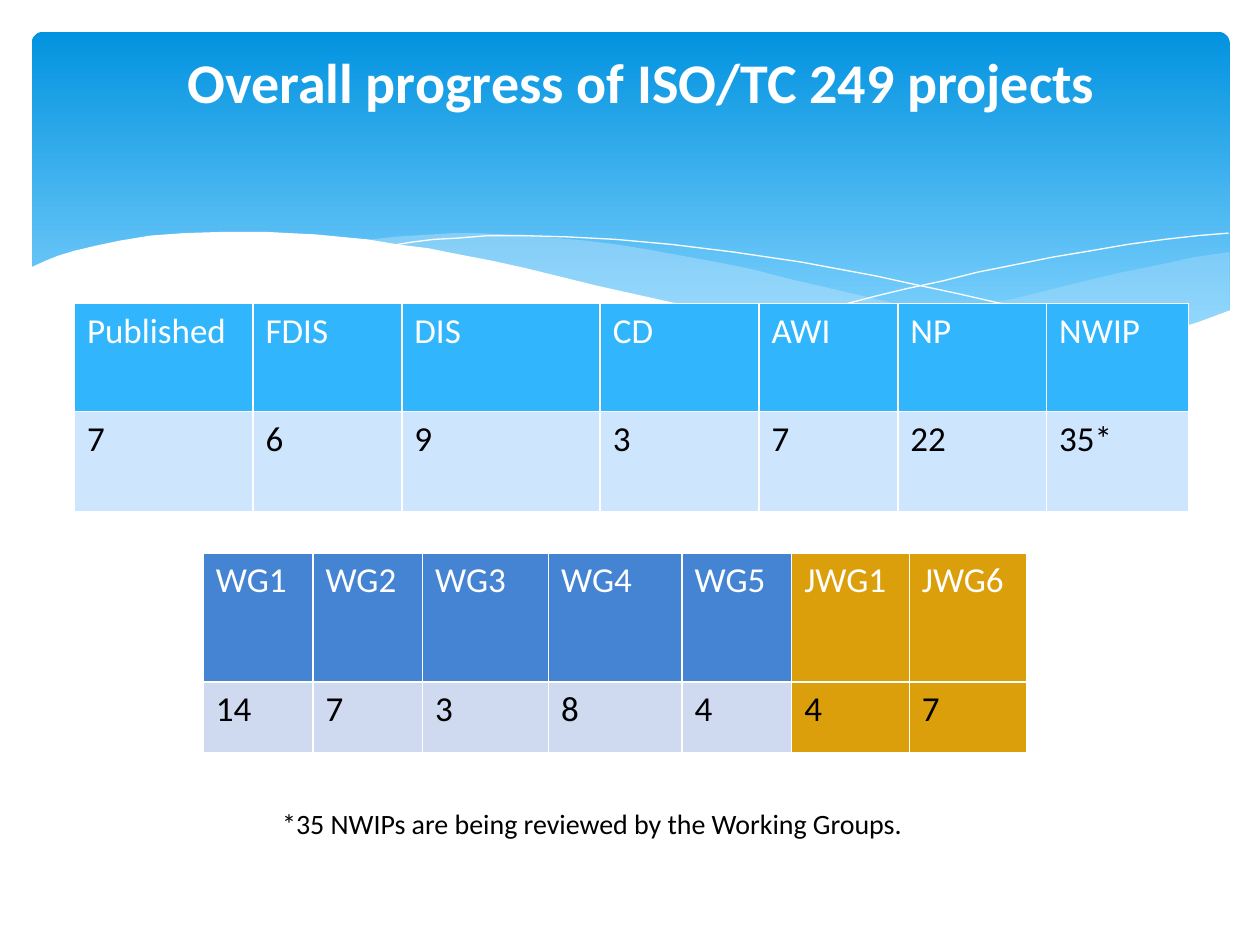
from lxml import etree
from pptx import Presentation, util as u
from pptx.dml.color import RGBColor
from pptx.enum import shapes, text
from pptx.oxml import ns

WHITE = RGBColor(0xFF, 0xFF, 0xFF)
BLACK = RGBColor(0, 0, 0)
DEEP = RGBColor(0x02, 0x93, 0xE0)
LIGHT = RGBColor(0x83, 0xD3, 0xFE)
MIST = RGBColor(0xC6, 0xE7, 0xFC)
SKY = RGBColor(0x31, 0xB6, 0xFD)
PALE = RGBColor(0xCE, 0xE5, 0xFE)
BLUE = RGBColor(0x45, 0x84, 0xD3)
GREY = RGBColor(0xCF, 0xD9, 0xEF)
GOLD = RGBColor(0xDC, 0x9F, 0x0C)
FONT = "Calibri"

# Content: boxes are left, top, width, height in cm
TITLE = "Overall progress of ISO/TC 249 projects"
NOTE = "*35 NWIPs are being reviewed by the Working Groups."

# Each column: head, value, width in cm, head fill, value fill
STAGES = [(*col, SKY, PALE) for col in (
    ("Published", "7", 3.6), ("FDIS", "6", 3), ("DIS", "9", 4),
    ("CD", "3", 3.2), ("AWI", "7", 2.8), ("NP", "22", 3),
    ("NWIP", "35*", 2.86))]
GROUPS = [(*col, BLUE, GREY) for col in (
    ("WG1", "14", 2.21), ("WG2", "7", 2.21), ("WG3", "3", 2.54),
    ("WG4", "8", 2.69), ("WG5", "4", 2.21))]
GROUPS += [(*col, GOLD, GOLD) for col in (
    ("JWG1", "4", 2.37), ("JWG6", "7", 2.37))]

# Wave outlines, on a grid of 1/100 inch
GRID = u.Cm(0.0254)
RIGHT = [(976, 200), (948, 204), (921, 210), (891, 216), (861, 223),
         (805, 237), (753, 248), (706, 257), (661, 265), (691, 269),
         (719, 272), (745, 275), (769, 277), (803, 278), (835, 277),
         (863, 275), (889, 272), (913, 267), (935, 262), (949, 257),
         (963, 252), (976, 247)]
MIDDLE = [(893, 273), (866, 269), (837, 265), (807, 260), (775, 254),
          (741, 247), (706, 240), (668, 231), (629, 222), (598, 214),
          (569, 208), (541, 203), (514, 198), (489, 194), (465, 191),
          (442, 189), (420, 187), (399, 186), (380, 185), (361, 185),
          (344, 186), (313, 188), (286, 191), (323, 196), (362, 203),
          (404, 211), (449, 222), (491, 232), (530, 240), (566, 248),
          (601, 255), (634, 261), (665, 266), (695, 270), (722, 274),
          (748, 276), (773, 277), (807, 278), (838, 278), (867, 276)]
FALL = [(309, 195), (328, 192), (344, 190), (363, 189), (387, 187),
        (416, 187), (450, 188), (489, 190), (533, 194), (582, 200),
        (636, 208), (695, 219), (727, 226), (760, 233), (795, 241),
        (831, 251), (869, 261), (907, 272)]
RISE = [(613, 257), (653, 246), (695, 235), (720, 229), (748, 223),
        (776, 216), (806, 210), (836, 204), (866, 199), (895, 194),
        (924, 190), (951, 187), (975, 185)]
FRONT = [(977, 246), (950, 256), (920, 265), (887, 271), (850, 275),
         (809, 277), (778, 276), (744, 274), (708, 270), (668, 265),
         (626, 258), (579, 250), (529, 239), (475, 227), (418, 213),
         (391, 207), (365, 202), (340, 197), (316, 194), (292, 190),
         (271, 188), (250, 186), (230, 185), (211, 184), (177, 184),
         (146, 185), (119, 187), (95, 191), (76, 195), (59, 199),
         (46, 203), (36, 207), (23, 213), (23, 329), (977, 329)]
# Points, fill, opacity in percent; without a fill it is a white line
WAVES = [(RIGHT, MIST, 29), (MIDDLE, MIST, 40), (FALL, None, 100),
         (RISE, None, 100), (FRONT, WHITE, 100)]


def style(par, size, color, bold=False):
    font = par.font
    font.name, font.size, font.bold = FONT, u.Pt(size), bold
    font.color.rgb = color


def banner(slide):
    box = map(u.Cm, (0.64, 0.64, 24.15, 6.86))
    card = slide.shapes.add_shape(shapes.MSO_SHAPE.ROUNDED_RECTANGLE, *box)
    card.adjustments[0] = 0.034
    card.shadow.inherit = False
    card.line.fill.background()
    card.fill.gradient()
    card.fill.gradient_angle = 270
    for stop, color, pos in zip(card.fill.gradient_stops,
                                (DEEP, LIGHT), (0, 0.9)):
        stop.color.rgb, stop.position = color, pos


def wave(slide, points, color, alpha):
    pen = slide.shapes.build_freeform(*points[0], scale=GRID)
    pen.add_line_segments(points[1:], close=color is not None)
    shape = pen.convert_to_shape()
    shape.shadow.inherit = False
    if color is None:
        shape.fill.background()
        shape.line.color.rgb = WHITE
        shape.line.width = u.Pt(0)
        return
    shape.line.fill.background()
    shape.fill.solid()
    shape.fill.fore_color.rgb = color
    if alpha < 100:
        tint = shape.fill._xPr.find(".//" + ns.qn("a:srgbClr"))
        etree.SubElement(tint, ns.qn("a:alpha"), val=str(alpha * 1000))


def label(slide, words, box, size, color, bold=False):
    frame = slide.shapes.add_textbox(*map(u.Cm, box)).text_frame
    frame.word_wrap = True
    par = frame.paragraphs[0]
    par.text = words
    style(par, size, color, bold)
    return frame


def border(cell):
    props = cell._tc.get_or_add_tcPr()
    for side in "LRTB":
        line = etree.SubElement(props, ns.qn("a:ln" + side),
                                w=str(u.Pt(1)))
        fill = etree.SubElement(line, ns.qn("a:solidFill"))
        etree.SubElement(fill, ns.qn("a:srgbClr"), val=str(WHITE))


def grid(slide, cols, left, top, rows):
    width = sum(col[2] for col in cols)
    box = map(u.Cm, (left, top, width, sum(rows)))
    table = slide.shapes.add_table(len(rows), len(cols), *box).table
    for row, high in zip(table.rows, rows):
        row.height = u.Cm(high)
    for c, (head, value, wide, dark, pale) in enumerate(cols):
        table.columns[c].width = u.Cm(wide)
        parts = (head, dark, WHITE), (value, pale, BLACK)
        for r, (words, fill, ink) in enumerate(parts):
            cell = table.cell(r, c)
            cell.text = words
            style(cell.text_frame.paragraphs[0], 20, ink)
            border(cell)
            cell.fill.solid()
            cell.fill.fore_color.rgb = fill


def main():
    deck = Presentation()
    deck.slide_width, deck.slide_height = u.Cm(25.4), u.Cm(19.05)
    slide = deck.slides.add_slide(deck.slide_layouts[6])

    # Backdrop
    banner(slide)
    for item in WAVES:
        wave(slide, *item)

    # Title
    frame = label(slide, TITLE, (1.5, 0.74, 22.86, 1.8), 32, WHITE, True)
    frame.vertical_anchor = text.MSO_ANCHOR.MIDDLE
    frame.paragraphs[0].alignment = text.PP_ALIGN.CENTER

    # Tables and footnote
    grid(slide, STAGES, 1.5, 6.12, (2.18, 2.02))
    grid(slide, GROUPS, 4.1, 11.15, (2.6, 1.42))
    frame = label(slide, NOTE, (5.31, 16.13, 14.2, 0.94), 16, BLACK)
    frame.margin_left = u.Cm(0.38)

    deck.save("out.pptx")


if __name__ == "__main__":
    main()
